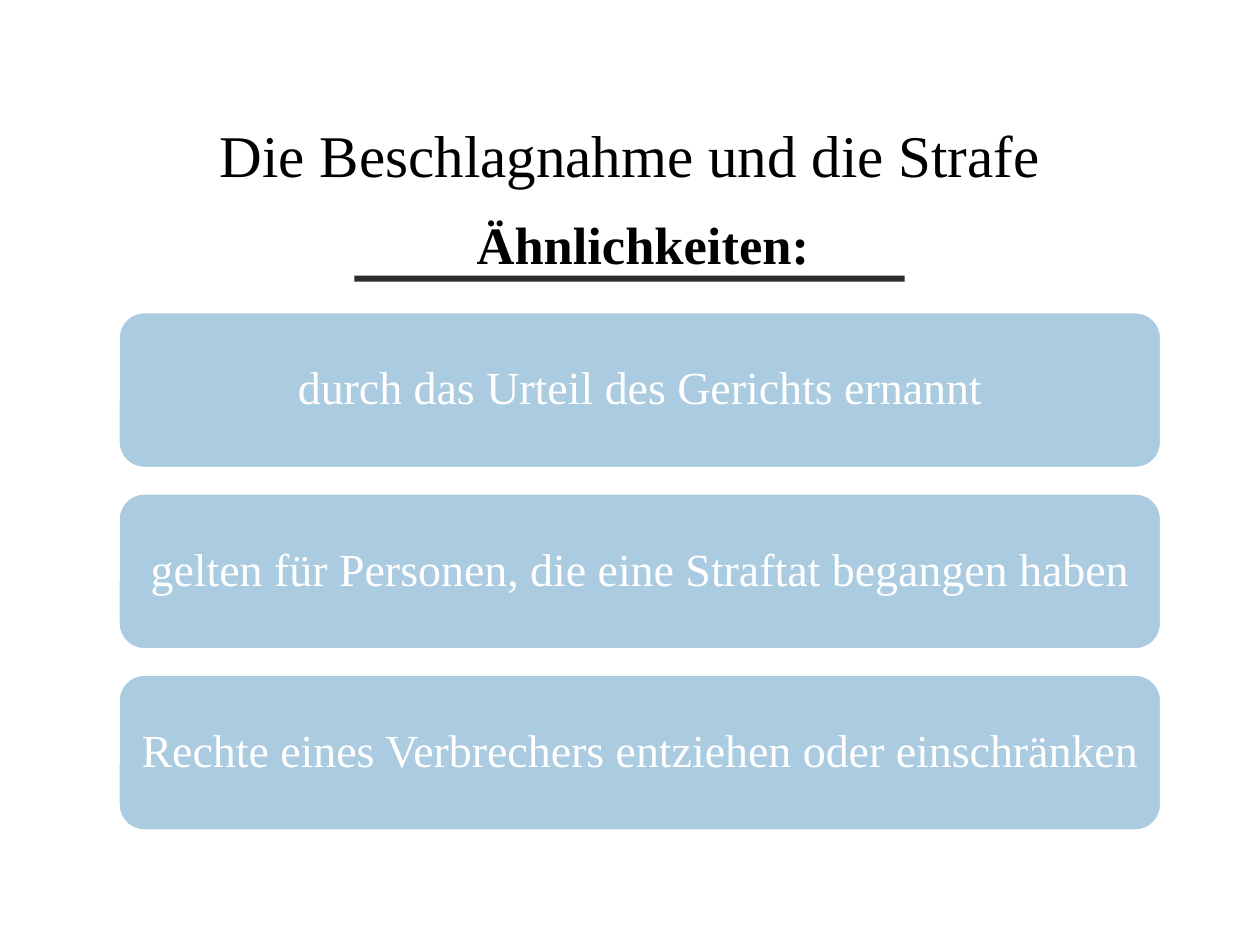
"""Build a slide on the similarities between confiscation and punishment."""
from pptx import Presentation
from pptx.dml.color import RGBColor
from pptx.enum.shapes import MSO_SHAPE as Shape
from pptx.enum.text import MSO_ANCHOR as Anchor, PP_ALIGN as Align
from pptx.util import Pt


def color(value):
    return RGBColor.from_string(value)


class Deck:
    font = "Times New Roman"
    ink, white, panel, rule = "000000", "FFFFFF", "AACBE0", "2E2C2F"

    def __init__(self, width, height):
        self.prs = Presentation()
        self.prs.slide_width, self.prs.slide_height = Pt(width), Pt(height)
        self.s = self.prs.slides.add_slide(self.prs.slide_layouts[5])

    def set_text(self, sp, text, size, fill, anchor=Anchor.MIDDLE, bold=False):
        tf = sp.text_frame
        tf.word_wrap = True
        tf.vertical_anchor = anchor
        p = tf.paragraphs[0]
        p.text = text
        p.alignment = Align.CENTER
        p.font.name, p.font.size, p.font.bold = self.font, Pt(size), bold
        p.font.color.rgb = color(fill)
        return p

    def title(self, text, x, y, w, h):
        sp = self.s.shapes.title
        sp.left, sp.top, sp.width, sp.height = Pt(x), Pt(y), Pt(w), Pt(h)
        self.set_text(sp, text, 36, self.ink)

    def subtitle(self, text, x, y, w, h):
        sp = self.s.shapes.add_textbox(Pt(x), Pt(y), Pt(w), Pt(h))
        p = self.set_text(sp, text, 32, self.ink, Anchor.TOP, bold=True)
        p.space_before = Pt(6.4)

    def box(self, kind, x, y, w, h, fill):
        sp = self.s.shapes.add_shape(kind, Pt(x), Pt(y), Pt(w), Pt(h))
        sp.shadow.inherit = False
        sp.fill.solid()
        sp.fill.fore_color.rgb = color(fill)
        sp.line.fill.background()
        return sp

    def card(self, text, x, y, w, h):
        sp = self.box(Shape.ROUNDED_RECTANGLE, x, y, w, h, self.panel)
        sp.line.color.rgb = color(self.white)
        sp.line.width = Pt(2)
        p = self.set_text(sp, text, 28, self.white)
        p.line_spacing = 0.9

    def bar(self, x, y, w, h):
        self.box(Shape.RECTANGLE, x, y, w, h, self.rule)


def main():
    deck = Deck(768, 576)
    deck.title("Die Beschlagnahme und die Strafe", 0, 49, 768, 90)
    deck.subtitle("Ähnlichkeiten: ", 72, 126, 648, 42)
    points = (
        "durch das Urteil des Gerichts ernannt",
        "gelten für Personen, die eine Straftat begangen haben",
        "Rechte eines Verbrechers entziehen oder einschränken",
    )
    for i, point in enumerate(points):
        deck.card(point, 72, 190 + i * 110.5, 636, 95.5)
    deck.bar(216, 168, 335.5, 3.6)
    deck.prs.save("out.pptx")


if __name__ == "__main__":
    main()
